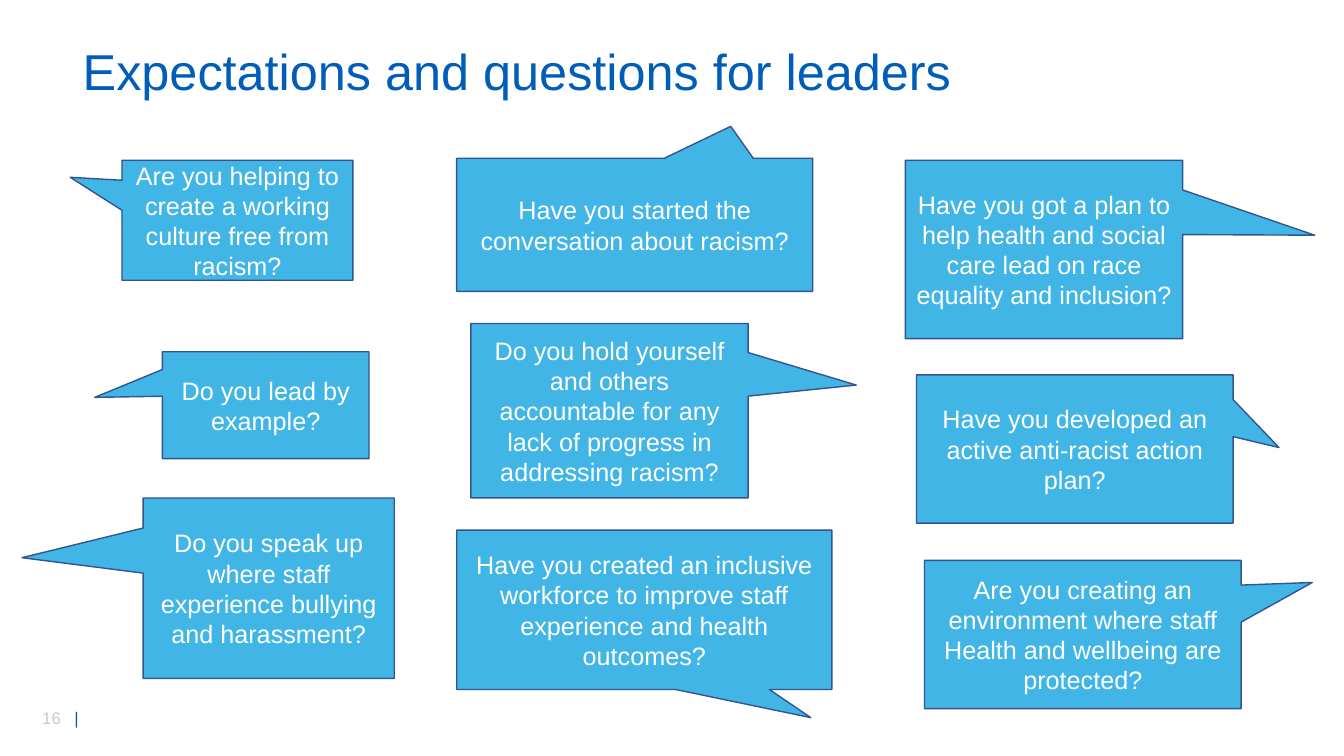
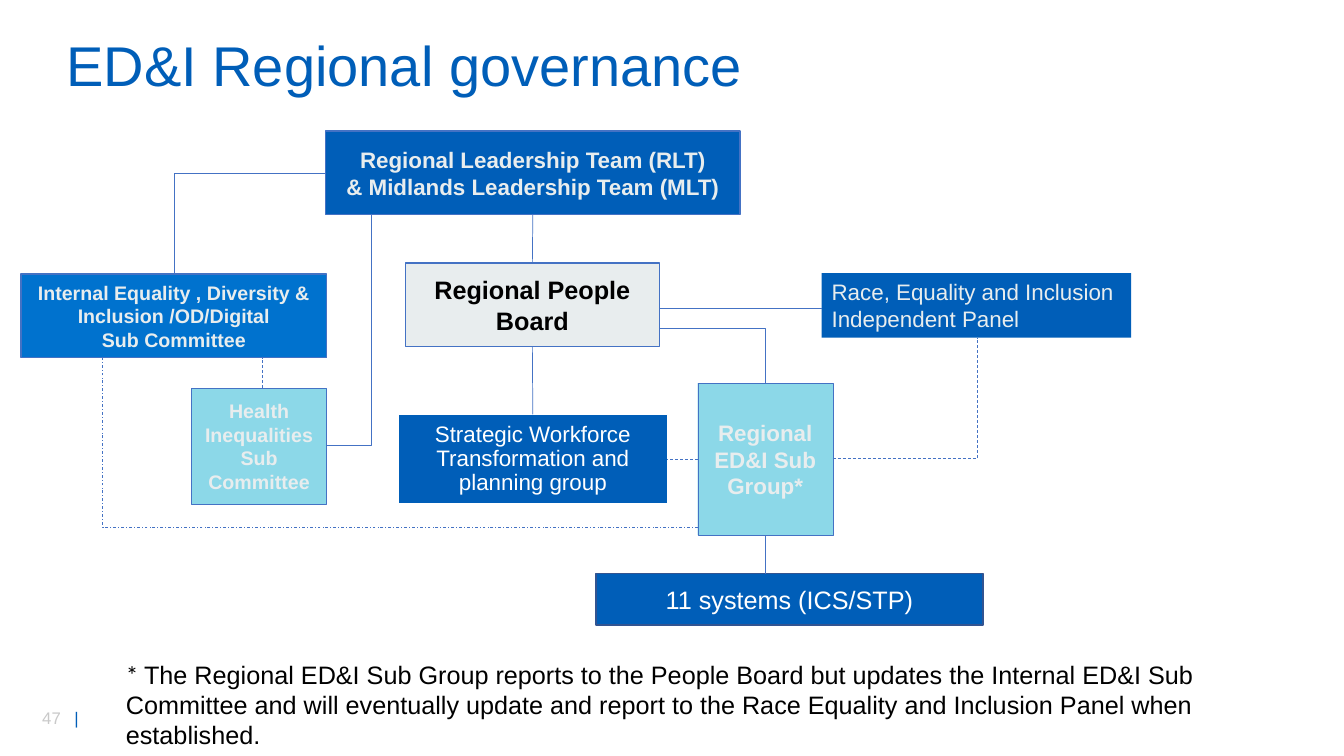
from dataclasses import dataclass
from typing import Any, NamedTuple, Optional

import pptx
import pptx.dml.color
import pptx.enum.dml
import pptx.enum.shapes
import pptx.enum.text
import pptx.oxml.ns
import pptx.util
from lxml import etree
from pptx.util import Inches

ALIGN = pptx.enum.text.PP_ALIGN
ANCHOR = pptx.enum.text.MSO_ANCHOR
SHAPE = pptx.enum.shapes.MSO_SHAPE
DASH = pptx.enum.dml.MSO_LINE
qn = pptx.oxml.ns.qn

FONT = "Arial"
BLUE, BRIGHT_BLUE, SKY, AQUA = "005EB8", "0072CE", "41B6E6", "00A9CE"
OUTLINE, LINK = "325491", "4472C4"
WHITE, BLACK, PALE, GREY = "FFFFFF", "000000", "E8EDEE", "C9C9C9"
TOP, LEFT, BOTTOM, RIGHT = range(4)


class Frame(NamedTuple):
    left: float
    top: float
    width: float
    height: float

    def lengths(self) -> list[int]:
        return [Inches(value) for value in self]


@dataclass
class Callout:
    text: str
    frame: Frame
    tip: tuple[float, float]  # from the centre, as shares of width and height


@dataclass
class Box:
    text: str
    frame: Frame
    fill: str
    color: str = PALE
    size: int = 16
    bold: bool = True
    outline: Optional[str] = LINK
    outline_width: float = 1
    opacity: Optional[int] = None
    inset: tuple[float, float] = (0.03, 0.03)
    align: Any = ALIGN.CENTER
    spacing: float = 1.0


class Joint(NamedTuple):
    box: str
    side: int


@dataclass
class Link:
    """A line between points or box sides; an elbow runs horizontally first."""
    start: tuple[float, float]
    end: tuple[float, float]
    dash: Any = None
    elbow: bool = False
    start_joint: Optional[Joint] = None
    end_joint: Optional[Joint] = None


def rgb(color: str) -> pptx.dml.color.RGBColor:
    return pptx.dml.color.RGBColor.from_string(color)


def set_font(target: Any, size: float, color: str, bold: bool = False, name: str = FONT) -> None:
    font = target.font
    font.name, font.size, font.bold = name, pptx.util.Pt(size), bold
    font.color.rgb = rgb(color)


def add_text_box(slide: Any, frame: Frame) -> Any:
    text_frame = slide.shapes.add_textbox(*frame.lengths()).text_frame
    text_frame.word_wrap = True
    return text_frame


def add_title(slide: Any, text: str, frame: Frame, size: int) -> None:
    title = slide.shapes.title
    title.left, title.top, title.width, title.height = frame.lengths()
    title.text_frame.text = text
    title.text_frame.auto_size = pptx.enum.text.MSO_AUTO_SIZE.NONE
    title.text_frame.vertical_anchor = ANCHOR.MIDDLE
    heading = title.text_frame.paragraphs[0]
    heading.alignment, heading.line_spacing = ALIGN.LEFT, 0.9
    set_font(heading, size, BLUE)


def add_page_number(slide: Any, number: int) -> None:
    paragraph = add_text_box(slide, Frame(0.32, 6.97, 0.71, 0.3)).paragraphs[0]
    tabs = etree.SubElement(paragraph._p.get_or_add_pPr(), qn("a:tabLst"))
    etree.SubElement(tabs, qn("a:tab"), pos=str(Inches(0.32)), algn="l")
    for text, color in ((f"{number}\t", GREY), ("|", BLUE)):
        run = paragraph.add_run()
        run.text = text
        set_font(run, 12, color)


def add_slide(deck: Any, title: str, frame: Frame, size: int, number: int) -> Any:
    slide = deck.slides.add_slide(deck.slide_layouts[5])
    add_title(slide, title, frame, size)
    add_page_number(slide, number)
    return slide


def add_box(slide: Any, box: Box, preset: Any = SHAPE.RECTANGLE) -> Any:
    shape = slide.shapes.add_shape(preset, *box.frame.lengths())
    shape.shadow.inherit = False
    shape.fill.solid()
    shape.fill.fore_color.rgb = rgb(box.fill)
    if box.opacity is not None:
        fill_color = shape.element.spPr.find(qn("a:solidFill"))[0]
        etree.SubElement(fill_color, qn("a:alpha"), val=str(box.opacity * 1000))
    if box.outline:
        shape.line.color.rgb = rgb(box.outline)
        shape.line.width = pptx.util.Pt(box.outline_width)
    else:
        shape.line.fill.background()

    text_frame = shape.text_frame
    text_frame.text = box.text
    text_frame.word_wrap = True
    text_frame.vertical_anchor = ANCHOR.MIDDLE
    text_frame.margin_left = text_frame.margin_right = Inches(box.inset[0])
    text_frame.margin_top = text_frame.margin_bottom = Inches(box.inset[1])
    for paragraph in text_frame.paragraphs:
        paragraph.alignment, paragraph.line_spacing = box.align, box.spacing
        set_font(paragraph, box.size, box.color, box.bold)
    return shape


def add_callout(slide: Any, callout: Callout) -> None:
    box = Box(callout.text, callout.frame, SKY, WHITE, 18, False, OUTLINE, inset=(0.1, 0.05))
    shape = add_box(slide, box, SHAPE.RECTANGULAR_CALLOUT)
    shape.adjustments[0], shape.adjustments[1] = callout.tip


def add_link(slide: Any, link: Link, boxes: dict[str, Any]) -> None:
    kind = pptx.enum.shapes.MSO_CONNECTOR
    line = slide.shapes.add_connector(
        kind.ELBOW if link.elbow else kind.STRAIGHT,
        *(Inches(value) for value in link.start + link.end))
    if link.elbow:
        line.element.spPr.find(qn("a:prstGeom")).set("prst", "bentConnector2")
    if link.start_joint:
        line.begin_connect(boxes[link.start_joint.box], link.start_joint.side)
    if link.end_joint:
        line.end_connect(boxes[link.end_joint.box], link.end_joint.side)
    line.line.color.rgb = rgb(LINK)
    line.line.width = pptx.util.Pt(0.5)
    if link.dash:
        line.line.dash_style = link.dash
    etree.SubElement(line.element.spPr, qn("a:effectLst"))


CALLOUTS = [
    Callout("Are you helping to create a working culture free from racism?",
            Frame(1.21, 1.59, 2.29, 1.19), (-0.724, -0.358)),
    Callout("Do you lead by example?", Frame(1.61, 3.49, 2.05, 1.06), (-0.827, -0.073)),
    Callout("Do you speak up where staff experience bullying and harassment?",
            Frame(1.42, 4.94, 2.49, 1.79), (-0.983, -0.169)),
    Callout("Have you started the conversation about racism?",
            Frame(4.53, 1.57, 3.53, 1.32), (0.27, -0.74)),
    Callout("Do you hold yourself and others accountable for any lack of progress "
            "in addressing racism?", Frame(4.67, 3.21, 2.75, 1.73), (0.89, -0.147)),
    Callout("Have you created an inclusive workforce to improve staff experience "
            "and health outcomes?", Frame(4.53, 5.26, 3.72, 1.58), (0.444, 0.677)),
    Callout("Have you got a plan to help health and social care lead on race "
            "equality and inclusion?", Frame(8.98, 1.59, 2.75, 1.77), (0.976, -0.08)),
    Callout("Have you developed an active anti-racist action plan?",
            Frame(9.09, 3.72, 3.14, 1.47), (0.645, -0.01)),
    Callout("Are you creating an environment where staff Health and wellbeing are protected?",
            Frame(9.17, 5.56, 3.14, 1.47), (0.725, -0.351)),
]

BOXES = {
    "panel": Box("Race, Equality and Inclusion Independent Panel",
                 Frame(8.15, 2.71, 3.07, 0.64), BLUE, bold=False, outline=None,
                 inset=(0.1, 0.05), align=ALIGN.LEFT),
    "workforce": Box("Strategic Workforce Transformation and planning group",
                     Frame(3.95, 4.11, 2.67, 0.89), BLUE, WHITE, bold=False,
                     outline=WHITE, inset=(0.02, 0.02), spacing=0.9),
    "systems": Box("11 systems (ICS/STP)", Frame(5.91, 5.69, 3.84, 0.51), BLUE, WHITE,
                   18, False, OUTLINE, inset=(0.1, 0.05)),
    "leadership": Box("Regional Leadership Team (RLT)\n& Midlands Leadership Team (MLT)",
                      Frame(3.23, 1.3, 4.11, 0.83), BLUE),
    "people": Box("Regional People Board", Frame(4.02, 2.61, 2.52, 0.83), PALE, BLACK, 18),
    "subgroup": Box("Regional ED&I Sub Group*", Frame(6.92, 3.8, 1.34, 1.51), AQUA,
                    outline_width=0.25, opacity=45, inset=(0.1, 0.05)),
    "internal": Box("Internal Equality , Diversity & Inclusion /OD/Digital\nSub Committee",
                    Frame(0.21, 2.72, 3.03, 0.83), BRIGHT_BLUE, size=14),
    "health": Box("Health Inequalities Sub Committee", Frame(1.9, 3.85, 1.34, 1.15), AQUA,
                  size=14, outline_width=0.25, opacity=45, inset=(0.1, 0.05)),
}

LINKS = [
    Link((5.28, 2.13), (5.28, 2.61), start_joint=Joint("leadership", BOTTOM),
         end_joint=Joint("people", TOP)),
    Link((5.28, 3.44), (5.28, 4.11), start_joint=Joint("people", BOTTOM),
         end_joint=Joint("workforce", TOP)),
    Link((6.92, 4.55), (6.62, 4.55), DASH.DASH, start_joint=Joint("subgroup", LEFT),
         end_joint=Joint("workforce", RIGHT)),
    Link((7.59, 5.31), (7.59, 5.69), start_joint=Joint("subgroup", BOTTOM)),
    Link((2.6, 3.85), (2.6, 3.55), DASH.DASH),
    Link((6.54, 3.06), (8.15, 3.06)),
    Link((3.23, 1.72), (1.73, 2.72), elbow=True),
    Link((3.24, 4.42), (3.68, 2.13), elbow=True),
    Link((6.54, 3.26), (7.59, 3.8), elbow=True),
    Link((8.26, 4.55), (9.69, 3.35), DASH.DASH, elbow=True),
    Link((6.92, 5.23), (1.02, 3.55), DASH.DASH_DOT, elbow=True),
]

FOOTNOTE = ("The Regional ED&I Sub Group reports to the People Board but updates the Internal "
            "ED&I Sub Committee and will eventually update and report to the Race Equality "
            "and Inclusion Panel when established.")


def build_questions(deck: Any) -> None:
    slide = add_slide(deck, "Expectations and questions for leaders",
                      Frame(0.72, 0.4, 10.61, 0.67), 36, 16)
    for callout in CALLOUTS:
        add_callout(slide, callout)


def build_governance(deck: Any) -> None:
    slide = add_slide(deck, "ED&I Regional governance",
                      Frame(0.56, 0.34, 11.64, 0.67), 40, 47)
    boxes = {name: add_box(slide, box) for name, box in BOXES.items()}
    for link in LINKS:
        add_link(slide, link, boxes)
    footnote = add_text_box(slide, Frame(1.15, 6.49, 11.38, 1.01)).paragraphs[0]
    for text, font_name in (("* ", "Calibri"), (FOOTNOTE, FONT)):
        run = footnote.add_run()
        run.text = text
        set_font(run, 18, BLACK, name=font_name)


def main() -> None:
    deck = pptx.Presentation()
    deck.slide_width, deck.slide_height = Inches(13.33), Inches(7.5)
    build_questions(deck)
    build_governance(deck)
    deck.save("out.pptx")


if __name__ == "__main__":
    main()
